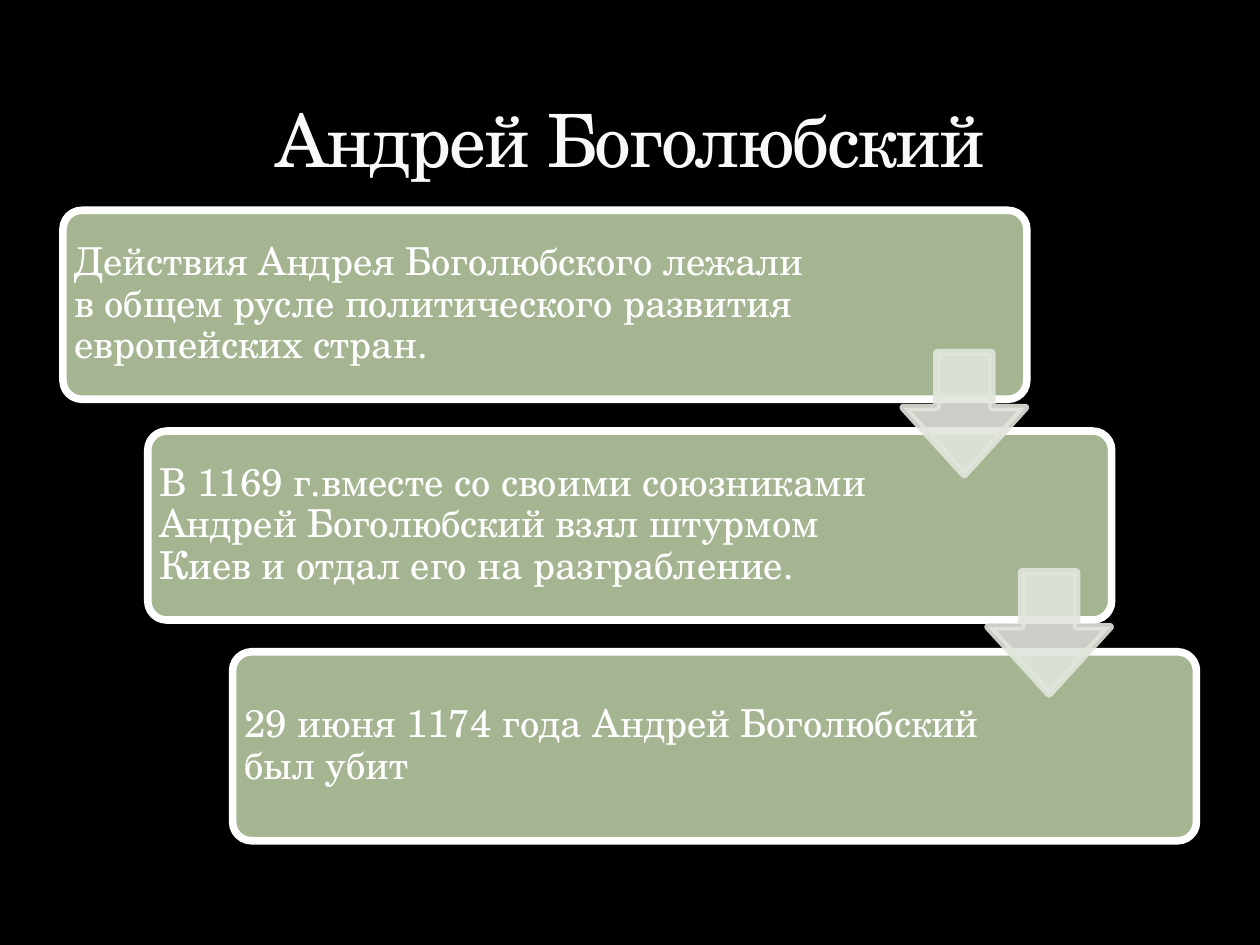
from lxml import etree
from pptx import Presentation
from pptx.dml.color import RGBColor
from pptx.enum.shapes import MSO_SHAPE
from pptx.enum.text import MSO_ANCHOR, PP_ALIGN
from pptx.oxml.ns import qn
from pptx.util import Cm, Pt

CARD, ARROW = MSO_SHAPE.ROUNDED_RECTANGLE, MSO_SHAPE.DOWN_ARROW
MIDDLE, BOTTOM = MSO_ANCHOR.MIDDLE, MSO_ANCHOR.BOTTOM
LEFT, CENTER = PP_ALIGN.LEFT, PP_ALIGN.CENTER
FONT = "TeX Gyre Schola"

TITLE = "Андрей Боголюбский"
STEPS = [
    "Действия Андрея Боголюбского лежали в общем русле политического "
    "развития европейских стран.",
    "В 1169 г.вместе со своими союзниками Андрей Боголюбский взял штурмом "
    "Киев и отдал его на разграбление.",
    "29 июня 1174 года Андрей Боголюбский был убит",
]

# Staircase geometry in centimetres
CARD_X, CARD_Y, CARD_W, CARD_H = 1.27, 4.24, 19.43, 3.81
STEP_X, STEP_Y = 1.71, 4.45
TEXT_W = 15.4
ARROW_X, ARROW_Y, ARROW_SIZE, ARROW_STEP_Y = 18.21, 7.11, 2.46, 4.42


def rgb(value):
    return RGBColor.from_string(value)


def set_alpha(fill_parent, percent):
    color = next(fill_parent.iter(qn("a:srgbClr")))
    etree.SubElement(color, qn("a:alpha"), val=str(percent * 1000))


def write(tf, text, size=22, color="FFFFFF", align=LEFT, anchor=MIDDLE,
          line_spacing=1.0, inset=0.23, tracking=None):
    tf.word_wrap = True
    tf.vertical_anchor = anchor
    tf.margin_left = tf.margin_right = Cm(inset)
    tf.margin_top = tf.margin_bottom = Cm(inset)
    p = tf.paragraphs[0]
    p.alignment = align
    p.line_spacing = line_spacing
    r = p.add_run()
    r.text = text
    r.font.name, r.font.size = FONT, Pt(size)
    r.font.color.rgb = rgb(color)
    if tracking is not None:
        r.font._element.set("spc", str(tracking * 100))


def add_block(s, kind, x, y, w, h, fill, line, adjustments, alpha=None):
    sp = s.shapes.add_shape(kind, Cm(x), Cm(y), Cm(w), Cm(h))
    sp.shadow.inherit = False
    for i, value in enumerate(adjustments):
        sp.adjustments[i] = value
    sp.fill.solid()
    sp.fill.fore_color.rgb = rgb(fill)
    sp.line.color.rgb = rgb(line)
    sp.line.width = Pt(4.33)
    if alpha is not None:
        set_alpha(sp._element.spPr.find(qn("a:solidFill")), alpha)
        set_alpha(sp._element.spPr.find(qn("a:ln")), alpha)


def add_step(s, index, text):
    x, y = CARD_X + index * STEP_X, CARD_Y + index * STEP_Y
    add_block(s, CARD, x, y, CARD_W, CARD_H, "A5B592", "FFFFFF", [0.1])
    box = s.shapes.add_textbox(Cm(x), Cm(y), Cm(TEXT_W), Cm(CARD_H))
    write(box.text_frame, text, line_spacing=0.9)


def add_arrow(s, index):
    add_block(s, ARROW, ARROW_X + index * STEP_X,
              ARROW_Y + index * ARROW_STEP_Y, ARROW_SIZE, ARROW_SIZE,
              "E1E5DC", "E1E5DC", [0.45, 0.55], alpha=90)


def add_title(s, text):
    sp = s.shapes.title
    sp.left, sp.top, sp.width, sp.height = Cm(1.27), Cm(0.43), Cm(22.86), Cm(3.38)
    write(sp.text_frame, text, size=42, color="F9F9F9", align=CENTER,
          anchor=BOTTOM, inset=0.13, tracking=-1)


def main():
    prs = Presentation()
    prs.slide_width, prs.slide_height = Cm(25.4), Cm(19.05)
    s = prs.slides.add_slide(prs.slide_layouts[5])
    s.background.fill.solid()
    s.background.fill.fore_color.rgb = rgb("000000")

    add_title(s, TITLE)
    # Descending cards, then the arrows that link them
    for i, text in enumerate(STEPS):
        add_step(s, i, text)
    for i in range(len(STEPS) - 1):
        add_arrow(s, i)

    prs.save("out.pptx")


if __name__ == "__main__":
    main()
